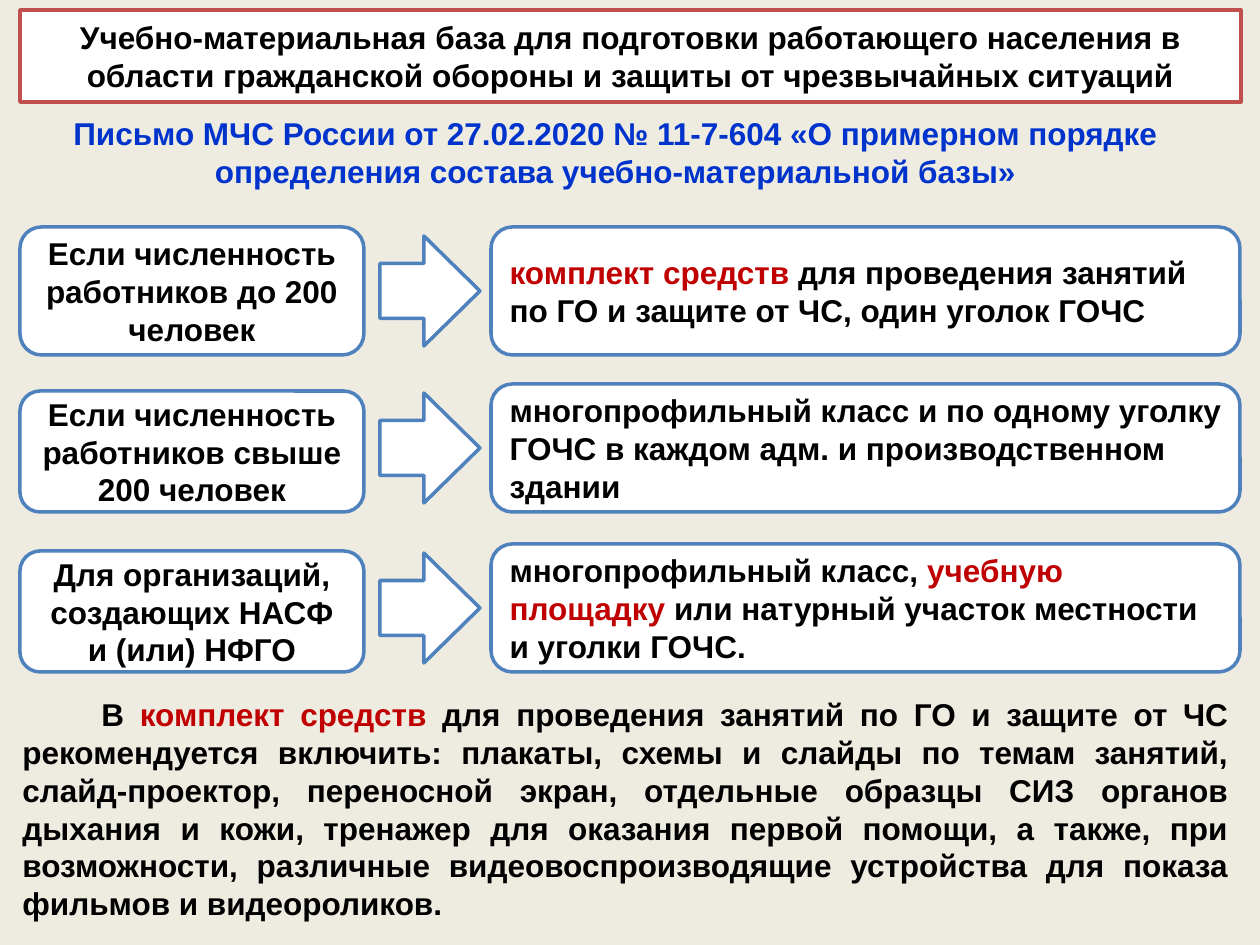
import pptx
import pptx.util
import pptx.dml.color
import pptx.enum.shapes
import pptx.enum.text
import pptx.oxml

PX = 7257  # EMU in one px, 126 px to the inch
BLACK, RED, BLUE, WHITE = "000000", "C00000", "0033CC", "FFFFFF"
BOX_LINE, TITLE_LINE, BACKGROUND = "4F81BD", "C0504D", "EEECE1"
ALIGN = pptx.enum.text.PP_ALIGN
SHAPE = pptx.enum.shapes.MSO_SHAPE
rgb = pptx.dml.color.RGBColor.from_string


def write(shape, align, *runs):
    """Fill the shape's only paragraph with (text, colour) runs."""
    shape.text_frame.word_wrap = True
    paragraph = shape.text_frame.paragraphs[0]
    paragraph.alignment = align
    paragraph.font.name = "Arial"
    paragraph.font.size = pptx.util.Pt(18)
    paragraph.font.bold = True
    for text, colour in runs:
        run = paragraph.add_run()
        run.text = text
        run.font.color.rgb = rgb(colour)
    return paragraph


def outline(shape, line_colour):
    """Give the shape a white fill and a 2 pt line."""
    shape.fill.solid()
    shape.fill.fore_color.rgb = rgb(WHITE)
    shape.line.color.rgb = rgb(line_colour)
    shape.line.width = pptx.util.Pt(2)
    shape.shadow.inherit = False
    shape.text_frame.vertical_anchor = pptx.enum.text.MSO_ANCHOR.MIDDLE


prs = pptx.Presentation()
prs.slide_width, prs.slide_height = 1260 * PX, 945 * PX
slide = prs.slides.add_slide(prs.slide_layouts[5])
slide.background.fill.solid()
slide.background.fill.fore_color.rgb = rgb(BACKGROUND)

# Title in a rounded frame
title = slide.shapes.title
title.left, title.top, title.width, title.height = 20 * PX, 10 * PX, 1221 * PX, 92 * PX
title._element.spPr.append(pptx.oxml.parse_xml(
    '<a:prstGeom xmlns:a="http://schemas.openxmlformats.org/drawingml/2006/main"'
    ' prst="roundRect"><a:avLst/></a:prstGeom>'))
outline(title, TITLE_LINE)
title.text_frame.auto_size = pptx.enum.text.MSO_AUTO_SIZE.NONE
write(title, ALIGN.CENTER,
      ("Учебно-материальная база для подготовки работающего населения в области "
       "гражданской обороны и защиты от чрезвычайных ситуаций", BLACK))

letter = slide.shapes.add_textbox(20 * PX, 108 * PX, 1191 * PX, 89 * PX)
write(letter, ALIGN.CENTER,
      ("Письмо МЧС России от 27.02.2020 № 11-7-604 «О примерном порядке "
       "определения состава учебно-материальной базы»", BLUE))

# Condition -> required facilities; both boxes of a row share the bottom edge
REQUIREMENT_HEIGHT = 128
rows = [
    (227, 128, "Если численность работников до 200 человек",
     [("комплект средств ", RED),
      ("для проведения занятий по ГО и защите от ЧС, один уголок ГОЧС", BLACK)]),
    (384, 121, "Если численность работников свыше 200 человек",
     [("многопрофильный класс и по одному уголку ГОЧС в каждом адм. и "
       "производственном здании", BLACK)]),
    (544, 121, "Для организаций, создающих НАСФ и (или) НФГО",
     [("многопрофильный класс, ", BLACK), ("учебную площадку ", RED),
      ("или натурный участок местности и уголки ГОЧС.", BLACK)]),
]
for top, condition_height, condition_text, requirement_runs in rows:
    condition_top = top + REQUIREMENT_HEIGHT - condition_height
    requirement = slide.shapes.add_shape(
        SHAPE.ROUNDED_RECTANGLE, 491 * PX, top * PX, 749 * PX, REQUIREMENT_HEIGHT * PX)
    condition = slide.shapes.add_shape(
        SHAPE.ROUNDED_RECTANGLE, 20 * PX, condition_top * PX, 344 * PX, condition_height * PX)
    arrow = slide.shapes.add_shape(
        SHAPE.RIGHT_ARROW, 380 * PX, (top + 9) * PX, 100 * PX, 110 * PX)
    arrow.adjustments[1] = 0.56
    for shape in (requirement, condition, arrow):
        outline(shape, BOX_LINE)
    write(requirement, ALIGN.LEFT, *requirement_runs)
    write(condition, ALIGN.CENTER, (condition_text, BLACK))

kit = slide.shapes.add_textbox(10 * PX, 689 * PX, 1231 * PX, 242 * PX)
kit_paragraph = write(
    kit, ALIGN.JUSTIFY,
    ("В ", BLACK), ("комплект средств ", RED),
    ("для проведения занятий по ГО и защите от ЧС рекомендуется включить: плакаты, "
     "схемы и слайды по темам занятий, слайд-проектор, переносной экран, отдельные "
     "образцы СИЗ органов дыхания и кожи, тренажер для оказания первой помощи, а также, "
     "при возможности, различные видеовоспроизводящие устройства для показа фильмов и "
     "видеороликов.", BLACK))
kit_paragraph._p.get_or_add_pPr().set("indent", str(79 * PX))

prs.save("out.pptx")
